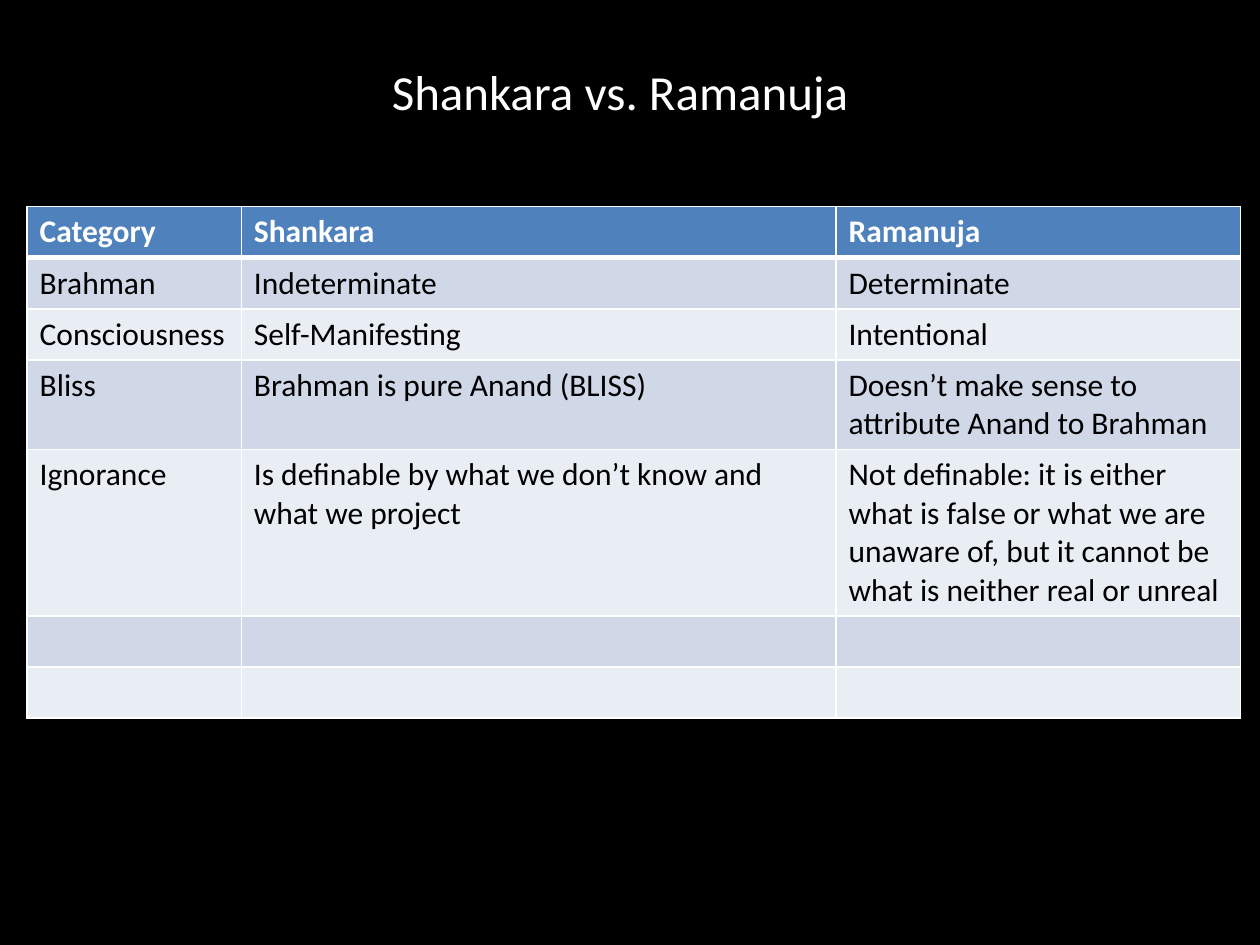
from lxml import etree
from pptx import Presentation
from pptx.dml.color import RGBColor
from pptx.enum.text import MSO_ANCHOR, PP_ALIGN
from pptx.oxml.ns import qn
from pptx.util import Pt

MIDDLE = MSO_ANCHOR.MIDDLE
CENTER = PP_ALIGN.CENTER
TITLE_ONLY = 5

BLACK = RGBColor(0x00, 0x00, 0x00)
WHITE = RGBColor(0xFF, 0xFF, 0xFF)
HEADER_BLUE = RGBColor(0x4F, 0x81, 0xBD)
BAND_DARK = RGBColor(0xD0, 0xD8, 0xE8)
BAND_LIGHT = RGBColor(0xE9, 0xED, 0xF4)

TITLE_FONT = {"name": "Calibri", "size": Pt(28), "bold": False}
HEADER_FONT = {"name": "Calibri", "size": Pt(18), "bold": True}
BODY_FONT = {"name": "Calibri", "size": Pt(18), "bold": False}

COLUMN_WIDTHS = [122.4, 339.84, 231.12]
ROW_HEIGHT = 29.2
COMPARISON = [
    ("Category", "Shankara", "Ramanuja"),
    ("Brahman", "Indeterminate", "Determinate"),
    ("Consciousness", "Self-Manifesting", "Intentional"),
    ("Bliss", "Brahman is pure Anand (BLISS)",
     "Doesn’t make sense to attribute Anand to Brahman"),
    ("Ignorance", "Is definable by what we don’t know and what we project",
     "Not definable: it is either what is false or what we are unaware of, "
     "but it cannot be what is neither real or unreal"),
    ("", "", ""),
    ("", "", ""),
]


def format_font(font, values, color):
    for attribute, value in values.items():
        setattr(font, attribute, value)
    font.color.rgb = color


def set_borders(cell, widths):
    properties = cell._tc.get_or_add_tcPr()
    for side, width in widths.items():
        border = etree.SubElement(properties, qn(f"a:ln{side}"), w=str(Pt(width)))
        fill = etree.SubElement(border, qn("a:solidFill"))
        etree.SubElement(fill, qn("a:srgbClr"), val=str(WHITE))


def add_title(slide, text):
    title = slide.shapes.title
    title.left, title.top = Pt(30.24), Pt(21.6)
    title.width, title.height = Pt(648), Pt(60.48)
    title.text_frame.text = text
    title.text_frame.vertical_anchor = MIDDLE
    heading = title.text_frame.paragraphs[0]
    heading.alignment = CENTER
    format_font(heading.font, TITLE_FONT, WHITE)


def fill_cell(cell, text, row_index):
    is_header = row_index == 0
    set_borders(cell, {"L": 1, "R": 1,
                       "T": 3 if row_index == 1 else 1,
                       "B": 3 if is_header else 1})
    band = BAND_DARK if row_index % 2 else BAND_LIGHT
    cell.fill.solid()
    cell.fill.fore_color.rgb = HEADER_BLUE if is_header else band
    cell.text = text
    format_font(cell.text_frame.paragraphs[0].font,
                HEADER_FONT if is_header else BODY_FONT,
                WHITE if is_header else BLACK)


def add_comparison(slide):
    table = slide.shapes.add_table(
        len(COMPARISON), len(COLUMN_WIDTHS), Pt(15.5), Pt(118.08),
        Pt(sum(COLUMN_WIDTHS)), Pt(ROW_HEIGHT * len(COMPARISON))).table
    for column, width in zip(table.columns, COLUMN_WIDTHS):
        column.width = Pt(width)
    for row_index, entries in enumerate(COMPARISON):
        table.rows[row_index].height = Pt(ROW_HEIGHT)
        for column_index, text in enumerate(entries):
            fill_cell(table.cell(row_index, column_index), text, row_index)


def main():
    presentation = Presentation()
    presentation.slide_width, presentation.slide_height = Pt(720), Pt(540)
    slide = presentation.slides.add_slide(presentation.slide_layouts[TITLE_ONLY])
    slide.background.fill.solid()
    slide.background.fill.fore_color.rgb = BLACK
    add_title(slide, "Shankara vs. Ramanuja")
    add_comparison(slide)
    presentation.save("out.pptx")


if __name__ == "__main__":
    main()
